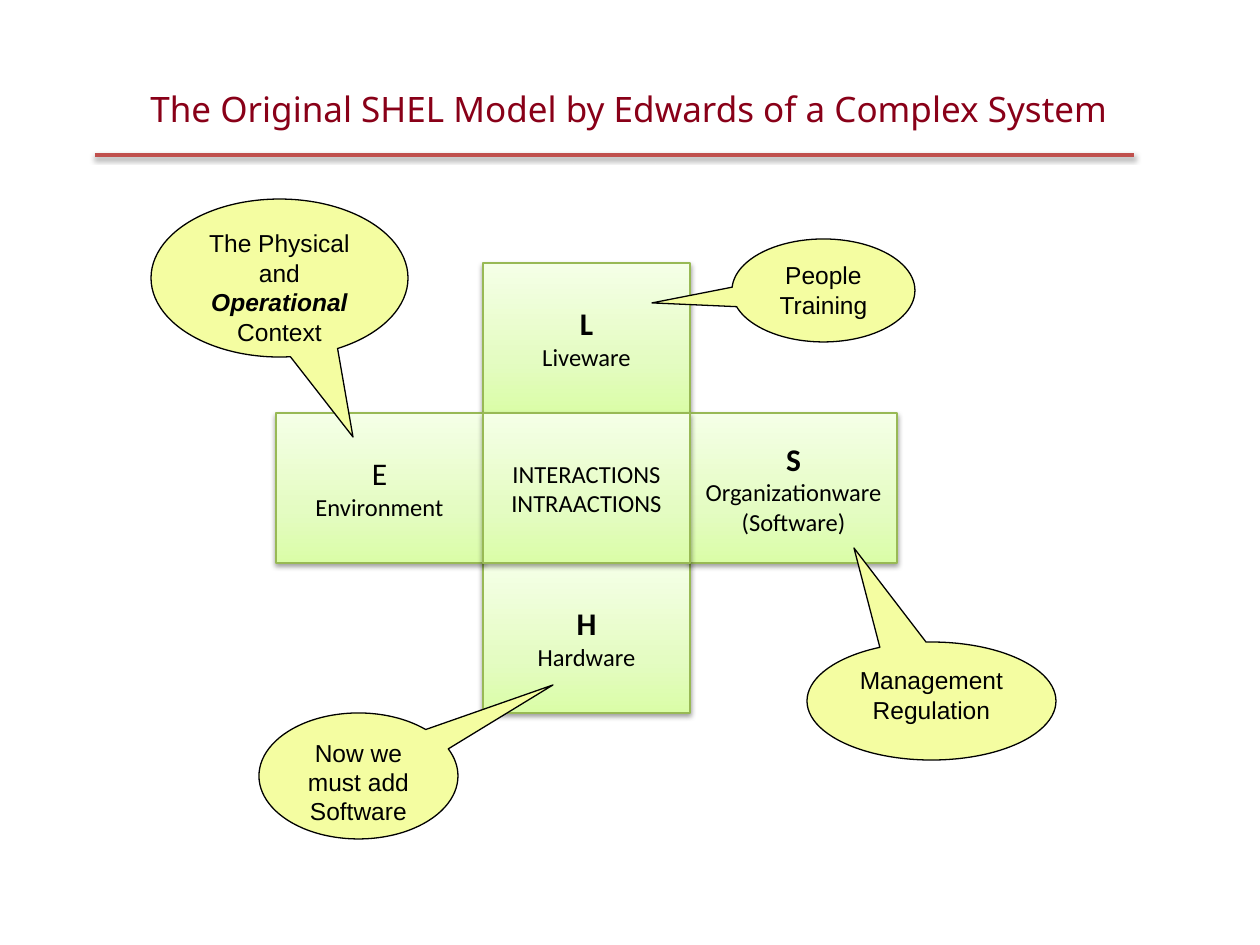
import copy

import pptx
import pptx.dml.color
import pptx.enum.dml
import pptx.enum.shapes
import pptx.enum.text
import pptx.oxml
import pptx.oxml.ns
import pptx.util

PX = 914400 // 126
SHAPE = pptx.enum.shapes.MSO_SHAPE
ANCHOR = pptx.enum.text.MSO_ANCHOR

TITLE = "The Original SHEL Model by Edwards of a Complex System"
TITLE_BOX = (54, 81, 1150, 84)
RULE = (95, 155, 1134, 155)

# Cross of cells: column, row, letter, letter is bold, lines under it
GRID_LEFT, GRID_TOP, CELL_W, CELL_H = 276, 263, 207, 150
CELLS = [
    (1, 0, "L", True, ["Liveware"]),
    (1, 2, "H", True, ["Hardware"]),
    (0, 1, "E", False, ["Environment"]),
    (2, 1, "S", True, ["Organizationware", "(Software)"]),
    (1, 1, None, False, ["INTERACTIONS", "INTRAACTIONS"]),
]
GRADIENT = [(0, "DAFDA7"), (0.35, "E4FCC2"), (1, "F5FFE7")]

# Callouts: box, tip of the tail, paragraphs as lists of (text, emphasised)
CALLOUTS = [
    ((807, 642, 249, 118), (854, 548), [[("Management", False)], [("Regulation", False)]]),
    ((151, 199, 257, 158), (353, 437),
     [[("The Physical and ", False), ("Operational ", True), ("Context", False)]]),
    ((259, 713, 199, 126), (553, 685), [[("Now we must add Software", False)]]),
    ((732, 239, 183, 103), (652, 303), [[("People", False)], [("Training", False)]]),
]

SHADOW = """<a:effectLst xmlns:a="http://schemas.openxmlformats.org/drawingml/2006/main">
<a:outerShdw blurRad="40000" dist="20000" dir="5400000" rotWithShape="0">
<a:srgbClr val="000000"><a:alpha val="38000"/></a:srgbClr></a:outerShdw></a:effectLst>"""


def emu(lengths):
    return [n * PX for n in lengths]


def rgb(value):
    return pptx.dml.color.RGBColor.from_string(value)


def add_run(p, text, size=14, font="Calibri", color="000000", bold=False, italic=False):
    r = p.add_run()
    r.text = text
    r.font.size = pptx.util.Pt(size)
    r.font.name = font
    r.font.color.rgb = rgb(color)
    r.font.bold = bold
    r.font.italic = italic


def add_paragraphs(sp, paragraphs, anchor=ANCHOR.TOP, wrap=True):
    """Write paragraphs, each a list of (text, format) runs, centred in the shape."""
    tf = sp.text_frame
    tf.word_wrap = wrap
    tf.vertical_anchor = anchor
    for i, runs in enumerate(paragraphs):
        p = tf.add_paragraph() if i else tf.paragraphs[0]
        p.alignment = pptx.enum.text.PP_ALIGN.CENTER
        for text, style in runs:
            add_run(p, text, **style)


def set_line(shape, color, width):
    shape.line.color.rgb = rgb(color)
    shape.line.width = pptx.util.Pt(width)


def add_shadow(shape):
    shape._element.spPr.append(pptx.oxml.parse_xml(SHADOW))


def fill_gradient(sp):
    sp.fill.gradient()
    sp.fill.gradient_angle = 90
    stops = sp._element.spPr.find(".//" + pptx.oxml.ns.qn("a:gsLst"))
    stops.insert(1, copy.deepcopy(stops[0]))
    for stop, (position, color) in zip(sp.fill.gradient_stops, GRADIENT):
        stop.position = position
        stop.color.rgb = rgb(color)


def add_cell(shapes, column, row, letter, bold, lines):
    box = (GRID_LEFT + column * CELL_W, GRID_TOP + row * CELL_H, CELL_W, CELL_H)
    sp = shapes.add_shape(SHAPE.RECTANGLE, *emu(box))
    fill_gradient(sp)
    set_line(sp, "98B955", 0.75)
    add_shadow(sp)
    paragraphs = [[(line, {})] for line in lines]
    if letter:
        paragraphs.insert(0, [(letter, {"size": 18, "bold": bold})])
    add_paragraphs(sp, paragraphs, anchor=ANCHOR.MIDDLE, wrap=False)


def add_callout(shapes, box, tip, paragraphs):
    left, top, width, height = box
    sp = shapes.add_shape(SHAPE.OVAL_CALLOUT, *emu(box))
    sp.adjustments[0] = (tip[0] - left) / width - 0.5
    sp.adjustments[1] = (tip[1] - top) / height - 0.5
    sp.shadow.inherit = False
    sp.fill.solid()
    sp.fill.fore_color.rgb = rgb("F4FDA1")
    set_line(sp, "000000", 0.75)
    add_paragraphs(sp, [
        [(text, {"font": "Arial", "bold": strong, "italic": strong}) for text, strong in runs]
        for runs in paragraphs])


def main():
    prs = pptx.Presentation()
    prs.slide_width = pptx.util.Inches(10)
    prs.slide_height = pptx.util.Inches(7.5)
    shapes = prs.slides.add_slide(prs.slide_layouts[6]).shapes

    rule = shapes.add_connector(pptx.enum.shapes.MSO_CONNECTOR.STRAIGHT, *emu(RULE))
    set_line(rule, "C0504D", 2)
    add_shadow(rule)

    title = shapes.add_textbox(*emu(TITLE_BOX))
    add_paragraphs(title, [[(TITLE, {"size": 20, "font": "Noto Sans", "color": "890018"})]])

    for cell in CELLS:
        add_cell(shapes, *cell)
    for callout in CALLOUTS:
        add_callout(shapes, *callout)
    prs.save("out.pptx")


if __name__ == "__main__":
    main()
